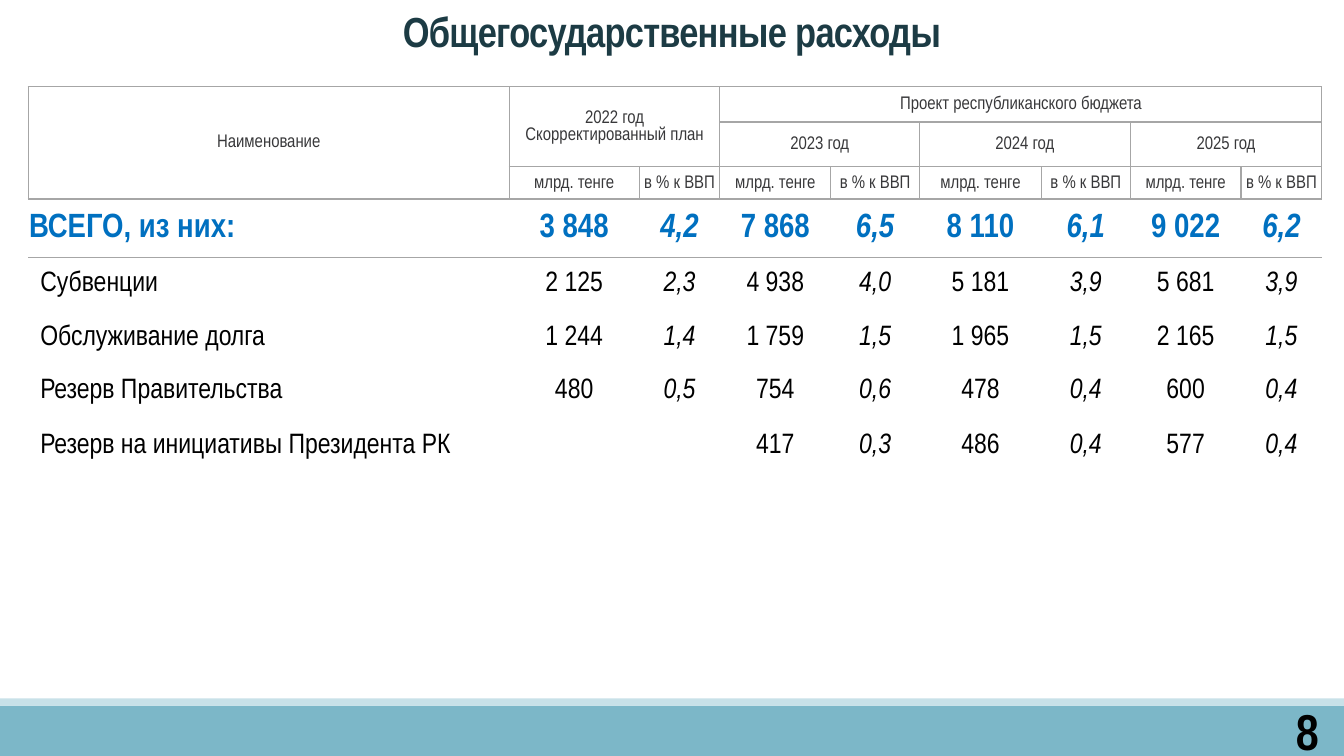
import pptx
import pptx.util
import pptx.dml.color
import pptx.enum.shapes
import pptx.enum.text
import pptx.oxml.ns
import lxml.etree

Inches = pptx.util.Inches
RGBColor = pptx.dml.color.RGBColor
ALIGN = pptx.enum.text.PP_ALIGN
MIDDLE = pptx.enum.text.MSO_ANCHOR.MIDDLE

FONT = "Arial Narrow"
PLAIN_TABLE = "{2D5ABB26-0587-4C30-8999-92F81FD0307C}"
TEAL = RGBColor(0x7C, 0xB7, 0xC8)
PALE = RGBColor(0xC8, 0xE1, 0xE8)
NAVY = RGBColor(0x1C, 0x3B, 0x44)
GRAY = RGBColor(0x38, 0x38, 0x3A)
BLUE = RGBColor(0x00, 0x70, 0xC0)
BLACK = RGBColor(0, 0, 0)
BORDER = RGBColor(0xA6, 0xA6, 0xA6)

COLS = [4.77, 1.29, 0.8, 1.1, 0.88, 1.21, 0.88, 1.1, 0.8]
ROWS = [0.35, 0.35, 0.32, 0.58, 0.52, 0.55, 0.51, 0.58]
HEADER_ROWS = 3
HEADERS = [
    (0, 0, 3, 1, "Наименование"),
    (0, 1, 2, 2, "2022 год\nСкорректированный план"),
    (0, 3, 1, 6, "Проект республиканского бюджета"),
    (1, 3, 1, 2, "2023 год"),
    (1, 5, 1, 2, "2024 год"),
    (1, 7, 1, 2, "2025 год"),
]
UNITS = ["млрд. тенге", "в % к ВВП"]
EXPENSES = [
    ["ВСЕГО, из них:", "3 848", "4,2", "7 868", "6,5", "8 110", "6,1", "9 022", "6,2"],
    ["Субвенции", "2 125", "2,3", "4 938", "4,0", "5 181", "3,9", "5 681", "3,9"],
    ["Обслуживание долга", "1 244", "1,4", "1 759", "1,5", "1 965", "1,5", "2 165", "1,5"],
    ["Резерв Правительства", "480", "0,5", "754", "0,6", "478", "0,4", "600", "0,4"],
    ["Резерв на инициативы Президента РК", "", "", "417", "0,3", "486", "0,4", "577", "0,4"],
]


def write(tf, text, size=20, color=BLACK, bold=False, italic=False,
          align=ALIGN.CENTER, line=None, spacing=None):
    for i, words in enumerate(text.split("\n")):
        p = tf.add_paragraph() if i else tf.paragraphs[0]
        p.alignment = align
        if line:
            p.line_spacing = line
        r = p.add_run()
        r.text = words
        r.font.name = FONT
        r.font.size = pptx.util.Pt(size)
        r.font.color.rgb = color
        r.font.bold = bold
        r.font.italic = italic
        if spacing:
            r.font._element.set("spc", str(int(spacing * 100)))


def add_text(s, box, text, **fmt):
    tf = s.shapes.add_textbox(*map(Inches, box)).text_frame
    tf.word_wrap = True
    tf.vertical_anchor = MIDDLE
    write(tf, text, **fmt)


def add_band(s, box, color):
    sp = s.shapes.add_shape(pptx.enum.shapes.MSO_SHAPE.RECTANGLE, *map(Inches, box))
    sp.shadow.inherit = False
    sp.fill.solid()
    sp.fill.fore_color.rgb = color
    sp.line.fill.background()


def add_footer(s, left, top, width, height):
    add_band(s, (left, top + 0.07, width, height - 0.07), TEAL)
    add_band(s, (left, top, width, 0.07), PALE)
    add_text(s, (left + width - 1.58, top + 0.12, 1.43, 0.4), "8",
             size=36, bold=True, align=ALIGN.RIGHT)


def set_borders(cell, sides):
    tc_pr = cell._tc.get_or_add_tcPr()
    for i, side in enumerate(sides):
        ln = lxml.etree.Element(pptx.oxml.ns.qn("a:ln" + side), w="12700")
        fill = lxml.etree.SubElement(ln, pptx.oxml.ns.qn("a:solidFill"))
        lxml.etree.SubElement(fill, pptx.oxml.ns.qn("a:srgbClr"), val=str(BORDER))
        tc_pr.insert(i, ln)


def set_margins(cell, indent=0.01):
    cell.margin_left = Inches(indent)
    cell.margin_right = cell.margin_top = Inches(0.01)
    cell.margin_bottom = 0


def fill_cell(cell, text, **fmt):
    cell.vertical_anchor = MIDDLE
    write(cell.text_frame, text, **fmt)


def add_expense_table(s, left, top, width, height):
    table = s.shapes.add_table(len(ROWS), len(COLS),
                               *map(Inches, (left, top, width, height))).table
    table.first_row = False
    table.horz_banding = False
    table._tbl.tblPr.find(pptx.oxml.ns.qn("a:tableStyleId")).text = PLAIN_TABLE
    for col, w in zip(table.columns, COLS):
        col.width = Inches(w)
    for row, h in zip(table.rows, ROWS):
        row.height = Inches(h)
    for i in range(len(ROWS)):
        for j in range(len(COLS)):
            cell = table.cell(i, j)
            set_margins(cell, 0.12 if j == 0 and i > HEADER_ROWS else 0.01)
            cell.fill.background()
            if i < HEADER_ROWS:
                set_borders(cell, "LRTB")
            elif i == HEADER_ROWS:
                set_borders(cell, "T")

    units = [(2, j, 1, 1, UNITS[(j - 1) % 2]) for j in range(1, len(COLS))]
    for i, j, down, across, text in HEADERS + units:
        cell = table.cell(i, j)
        if down * across > 1:
            cell.merge(table.cell(i + down - 1, j + across - 1))
        fill_cell(cell, text, size=13, color=GRAY)

    for i, values in enumerate(EXPENSES):
        fmt = {} if i else dict(size=24, color=BLUE, bold=True)
        for j, text in enumerate(values):
            if text:
                fill_cell(table.cell(HEADER_ROWS + i, j), text,
                          italic=j > 0 and j % 2 == 0,
                          align=ALIGN.CENTER if j else ALIGN.LEFT, **fmt)


def main():
    prs = pptx.Presentation()
    prs.slide_width = Inches(13.33)
    prs.slide_height = Inches(7.5)
    s = prs.slides.add_slide(prs.slide_layouts[6])
    add_footer(s, 0, 6.93, 13.33, 0.57)
    add_text(s, (0, 0.02, 13.33, 0.52), "Общегосударственные расходы",
             size=30, color=NAVY, bold=True, line=1.1, spacing=-0.5)
    add_expense_table(s, 0.28, 0.86, 12.83, 3.76)
    prs.save("out.pptx")


if __name__ == "__main__":
    main()
